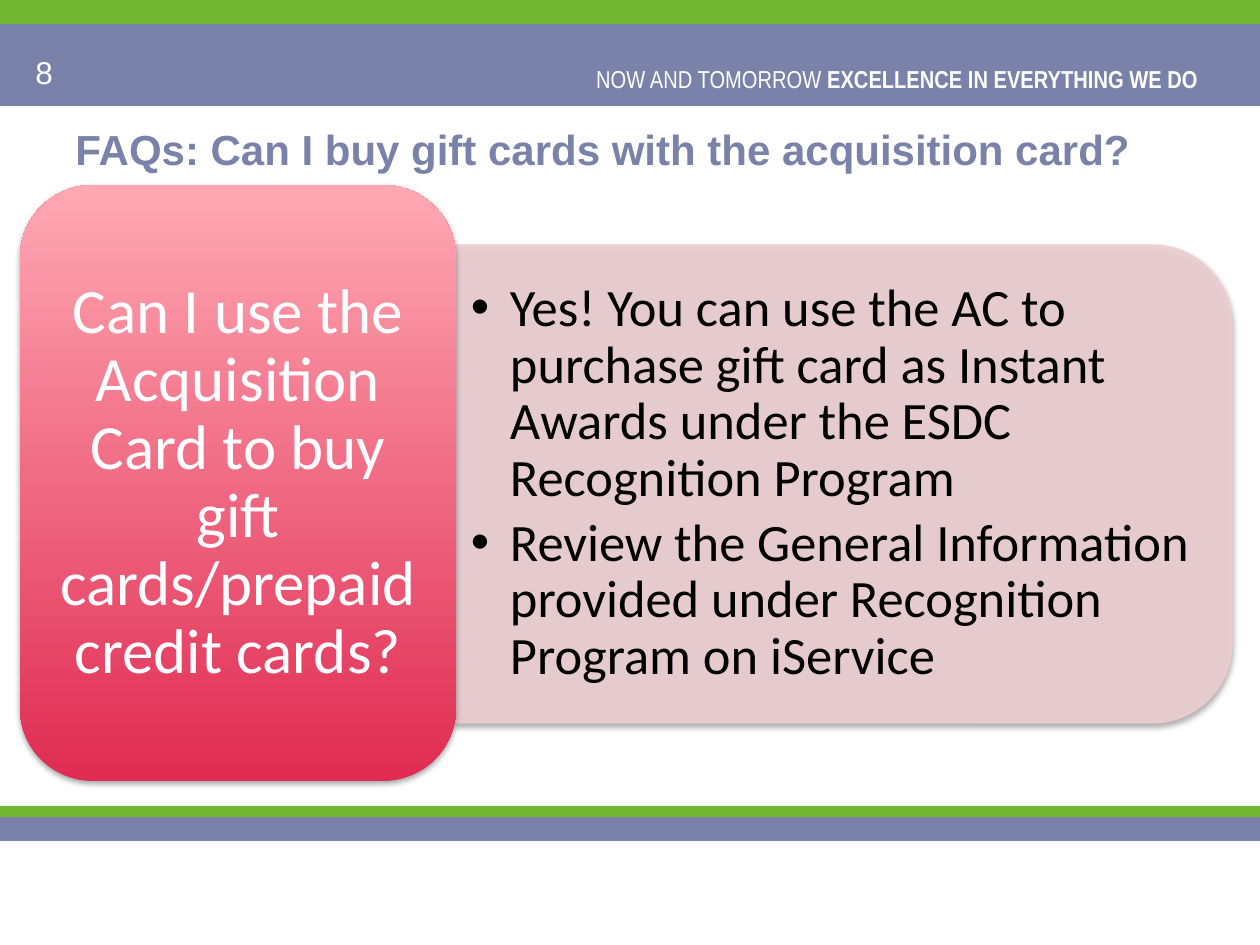
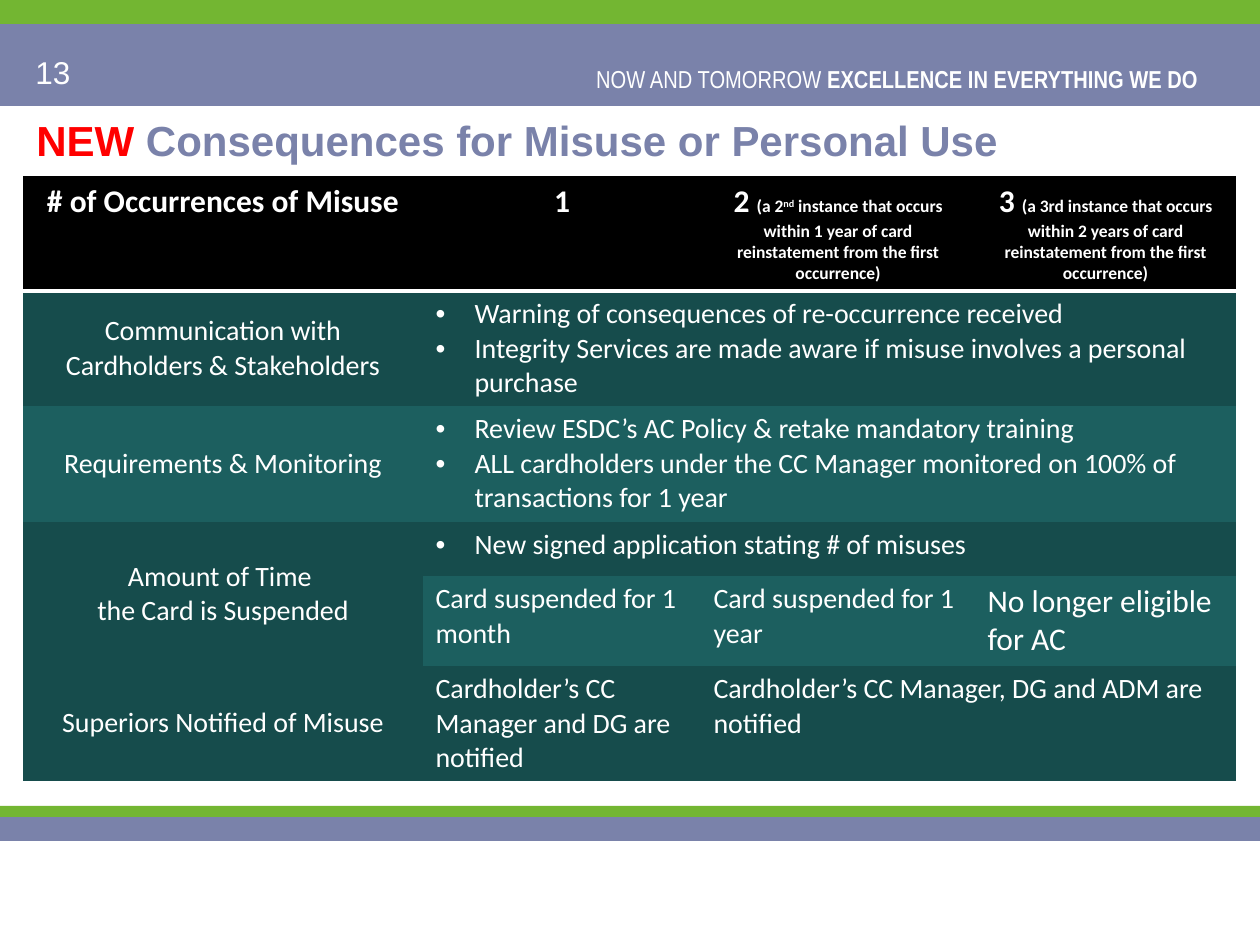
from dataclasses import dataclass, replace

from lxml.etree import SubElement
from pptx import Presentation
from pptx.dml.color import RGBColor
from pptx.enum.shapes import MSO_SHAPE
from pptx.enum.text import MSO_ANCHOR, PP_ALIGN
from pptx.oxml.ns import qn
from pptx.util import Emu, Pt

WHITE = RGBColor(0xFF, 0xFF, 0xFF)
BLACK = RGBColor(0x00, 0x00, 0x00)
RED = RGBColor(0xFF, 0x00, 0x00)
GREEN = RGBColor(0x73, 0xB6, 0x32)
SLATE = RGBColor(0x7A, 0x82, 0xAA)
PALE_ROSE = RGBColor(0xEC, 0xCF, 0xD2)
CRIMSON = RGBColor(0xE0, 0x2C, 0x53)
PINK = RGBColor(0xFF, 0xA8, 0xB3)
DARK_TEAL = RGBColor(0x16, 0x4C, 0x4C)
TEAL = RGBColor(0x1C, 0x5F, 0x5F)

PX_PER_INCH = 126
PAGE_WIDTH, PAGE_HEIGHT = 1260, 945
INDENT = 39
NO_GRID_STYLE = "{2D5ABB26-0587-4C30-8999-92F81FD0307C}"


def px(length):
    return Emu(round(length * 914400 / PX_PER_INCH))


@dataclass(frozen=True)
class Look:
    size: int = 16
    color: RGBColor = WHITE
    font: str = "Calibri"
    bold: bool = False
    align: PP_ALIGN = PP_ALIGN.LEFT
    anchor: MSO_ANCHOR = MSO_ANCHOR.TOP
    bullet: bool = False
    line_spacing: float = 1.0
    after: float = 0
    raised: bool = False


TITLE = Look(24, SLATE, "Arial", bold=True, anchor=MSO_ANCHOR.MIDDLE)
PAGE_NUMBER = Look(18, font="Arial")
MOTTO = Look(14, font="Arial Narrow", align=PP_ALIGN.RIGHT)
QUESTION = Look(36, align=PP_ALIGN.CENTER, anchor=MSO_ANCHOR.MIDDLE, line_spacing=0.9)
ANSWER = Look(30, BLACK, anchor=MSO_ANCHOR.MIDDLE, bullet=True, line_spacing=0.9, after=4.5)
HEADER = Look(18, bold=True, align=PP_ALIGN.CENTER)
TOPIC = Look(align=PP_ALIGN.CENTER, anchor=MSO_ANCHOR.MIDDLE)
DETAIL = Look()
POINTS = Look(bullet=True)
FINAL = Look(18)


class Deck:
    def __init__(self):
        self.file = Presentation()
        self.file.slide_width = px(PAGE_WIDTH)
        self.file.slide_height = px(PAGE_HEIGHT)
        self.page = None

    def add_page(self, number):
        self.page = self.file.slides.add_slide(self.file.slide_layouts[6])
        for top, height, color in ((24, 82, SLATE), (0, 24, GREEN),
                                   (817, 24, SLATE), (806, 11, GREEN)):
            self.shape(MSO_SHAPE.RECTANGLE, (0, top, PAGE_WIDTH, height), color)
        self.text((580, 58, 636, 43), MOTTO, [[
            "NOW AND TOMORROW ",
            ("EXCELLENCE IN EVERYTHING WE DO ", {"bold": True})]])
        self.text((23, 47, 294, 50), PAGE_NUMBER, [number])

    def shape(self, kind, place, color=None):
        shape = self.page.shapes.add_shape(kind, *map(px, place))
        shape.shadow.inherit = False
        shape.line.fill.background()
        if color is not None:
            shape.fill.solid()
            shape.fill.fore_color.rgb = color
        return shape

    def drop_shadow(self, shape):
        effects = shape._element.spPr.find(qn("a:effectLst"))
        shadow = SubElement(effects, qn("a:outerShdw"), blurRad=str(Pt(3.1)),
                            dist=str(Pt(1.8)), dir="5400000", rotWithShape="0")
        black = SubElement(shadow, qn("a:srgbClr"), val=str(BLACK))
        SubElement(black, qn("a:alpha"), val="35000")

    def text(self, place, look, paragraphs, insets=None):
        box = self.page.shapes.add_textbox(*map(px, place))
        self.fill_frame(box.text_frame, look, paragraphs, insets)

    def fill_frame(self, frame, look, paragraphs, insets=None):
        """Fill a frame; a paragraph is a string or a list of strings and (text, changes)."""
        frame.word_wrap = True
        frame.vertical_anchor = look.anchor
        if insets:
            frame.margin_left = frame.margin_right = px(insets[0])
            frame.margin_top = frame.margin_bottom = px(insets[1])
        for index, spans in enumerate(paragraphs):
            para = frame.add_paragraph() if index else frame.paragraphs[0]
            para.alignment = look.align
            para.line_spacing = look.line_spacing
            para.space_after = Pt(look.after)
            if look.bullet:
                self.bullet(para)
            for span in [spans] if isinstance(spans, str) else spans:
                words, changes = (span, {}) if isinstance(span, str) else span
                self.span(para, words, replace(look, **changes))

    def bullet(self, para):
        properties = para._p.get_or_add_pPr()
        properties.set("marL", str(px(INDENT)))
        properties.set("indent", str(-px(INDENT)))
        SubElement(properties, qn("a:buFont"), typeface="Arial")
        SubElement(properties, qn("a:buChar"), char="•")

    def span(self, para, words, look):
        run = para.add_run()
        run.text = words
        run.font.name = look.font
        run.font.size = Pt(look.size)
        run.font.bold = look.bold
        run.font.color.rgb = look.color
        if look.raised:
            run._r.get_or_add_rPr().set("baseline", "30000")

    def table(self, left, top, widths, heights):
        place = map(px, (left, top, sum(widths), sum(heights)))
        table = self.page.shapes.add_table(len(heights), len(widths), *place).table
        table.first_row = table.horz_banding = False
        table._tbl.tblPr.find(qn("a:tableStyleId")).text = NO_GRID_STYLE
        for column, width in zip(table.columns, widths):
            column.width = px(width)
        for row, height in zip(table.rows, heights):
            row.height = px(height)
        return table

    def cell(self, cell, color, look, paragraphs):
        cell.fill.solid()
        cell.fill.fore_color.rgb = color
        self.fill_frame(cell.text_frame, look, paragraphs)
        cell.vertical_anchor = look.anchor

    def underline_cell(self, cell):
        properties = cell._tc.get_or_add_tcPr()
        border = SubElement(properties, qn("a:lnB"), w=str(Pt(2)))
        fill = SubElement(border, qn("a:solidFill"))
        SubElement(fill, qn("a:srgbClr"), val=str(WHITE))
        properties.insert(0, border)


def add_gift_card_page(deck):
    deck.add_page("8")
    deck.text((63, 112, 1134, 73), TITLE,
              ["FAQs: Can I buy gift cards with the acquisition card?"])

    answer = deck.shape(MSO_SHAPE.ROUND_2_SAME_RECTANGLE, (605, 96, 478, 776), PALE_ROSE)
    answer.rotation = 90
    answer.line.color.rgb = PALE_ROSE
    answer.line.width = Pt(0.75)
    for color in answer._element.spPr.iter(qn("a:srgbClr")):
        SubElement(color, qn("a:alpha"), val="90000")
    deck.drop_shadow(answer)
    deck.text((456, 268, 752, 431), ANSWER, [
        "Yes! You can use the AC to purchase gift card as Instant Awards "
        "under the ESDC Recognition Program",
        "Review the General Information provided under Recognition Program on iService",
    ], insets=(15, 8))

    question = deck.shape(MSO_SHAPE.ROUNDED_RECTANGLE, (20, 185, 436, 596))
    question.fill.gradient()
    question.fill.gradient_angle = 90
    for stop, color in zip(question.fill.gradient_stops, (CRIMSON, PINK)):
        stop.color.rgb = color
    deck.drop_shadow(question)
    deck.fill_frame(question.text_frame, QUESTION, [
        "Can I use the Acquisition Card to buy gift cards/prepaid credit cards?"],
        insets=(17, 9))


def add_misuse_page(deck):
    deck.add_page("13")
    deck.text((24, 114, 1134, 52), TITLE, [[
        ("NEW", {"color": RED}), " Consequences for Misuse or Personal Use"]])

    small = {"size": 10}
    # row, column, column span, row span, fill, look, paragraphs
    cells = [
        (0, 0, 1, 1, BLACK, HEADER, ["# of Occurrences of Misuse"]),
        (0, 1, 1, 1, BLACK, HEADER, ["1"]),
        (0, 2, 1, 1, BLACK, HEADER, [[
            "2 ", ("(a 2", small), ("nd", {"size": 10, "raised": True}),
            (" instance that occurs within 1 year of card reinstatement "
             "from the first occurrence)", small)]]),
        (0, 3, 1, 1, BLACK, HEADER, [[
            "3 ", ("(a 3rd instance that occurs within 2 years of card "
                   "reinstatement from the first occurrence)", small)]]),
        (1, 0, 1, 1, DARK_TEAL, TOPIC, ["Communication with Cardholders & Stakeholders"]),
        (1, 1, 3, 1, DARK_TEAL, POINTS, [
            "Warning of consequences of re-occurrence received",
            "Integrity Services are made aware if misuse involves a personal purchase"]),
        (2, 0, 1, 1, TEAL, TOPIC, ["Requirements & Monitoring"]),
        (2, 1, 3, 1, TEAL, POINTS, [
            "Review ESDC’s AC Policy & retake mandatory training",
            "ALL cardholders under the CC Manager monitored on 100% of "
            "transactions for 1 year"]),
        (3, 0, 1, 2, DARK_TEAL, TOPIC, ["Amount of Time ", "the Card is Suspended"]),
        (3, 1, 3, 1, DARK_TEAL, POINTS, ["New signed application stating # of misuses"]),
        (4, 1, 1, 1, TEAL, DETAIL, ["Card suspended for 1 month"]),
        (4, 2, 1, 1, TEAL, DETAIL, ["Card suspended for 1 year"]),
        (4, 3, 1, 1, TEAL, FINAL, ["No longer eligible for AC"]),
        (5, 0, 1, 1, DARK_TEAL, TOPIC, ["Superiors Notified of Misuse"]),
        (5, 1, 1, 1, DARK_TEAL, DETAIL, ["Cardholder’s CC Manager and DG are notified"]),
        (5, 2, 2, 1, DARK_TEAL, DETAIL, ["Cardholder’s CC Manager, DG and ADM are notified"]),
    ]
    table = deck.table(23, 176, (400, 278, 274, 261), (115, 115, 116, 54, 90, 115))
    for row, column, across, down, color, look, paragraphs in cells:
        cell = table.cell(row, column)
        if across > 1 or down > 1:
            cell.merge(table.cell(row + down - 1, column + across - 1))
        deck.cell(cell, color, look, paragraphs)
        if row == 0:
            deck.underline_cell(cell)


def main():
    deck = Deck()
    add_gift_card_page(deck)
    add_misuse_page(deck)
    deck.file.save("out.pptx")


if __name__ == "__main__":
    main()
